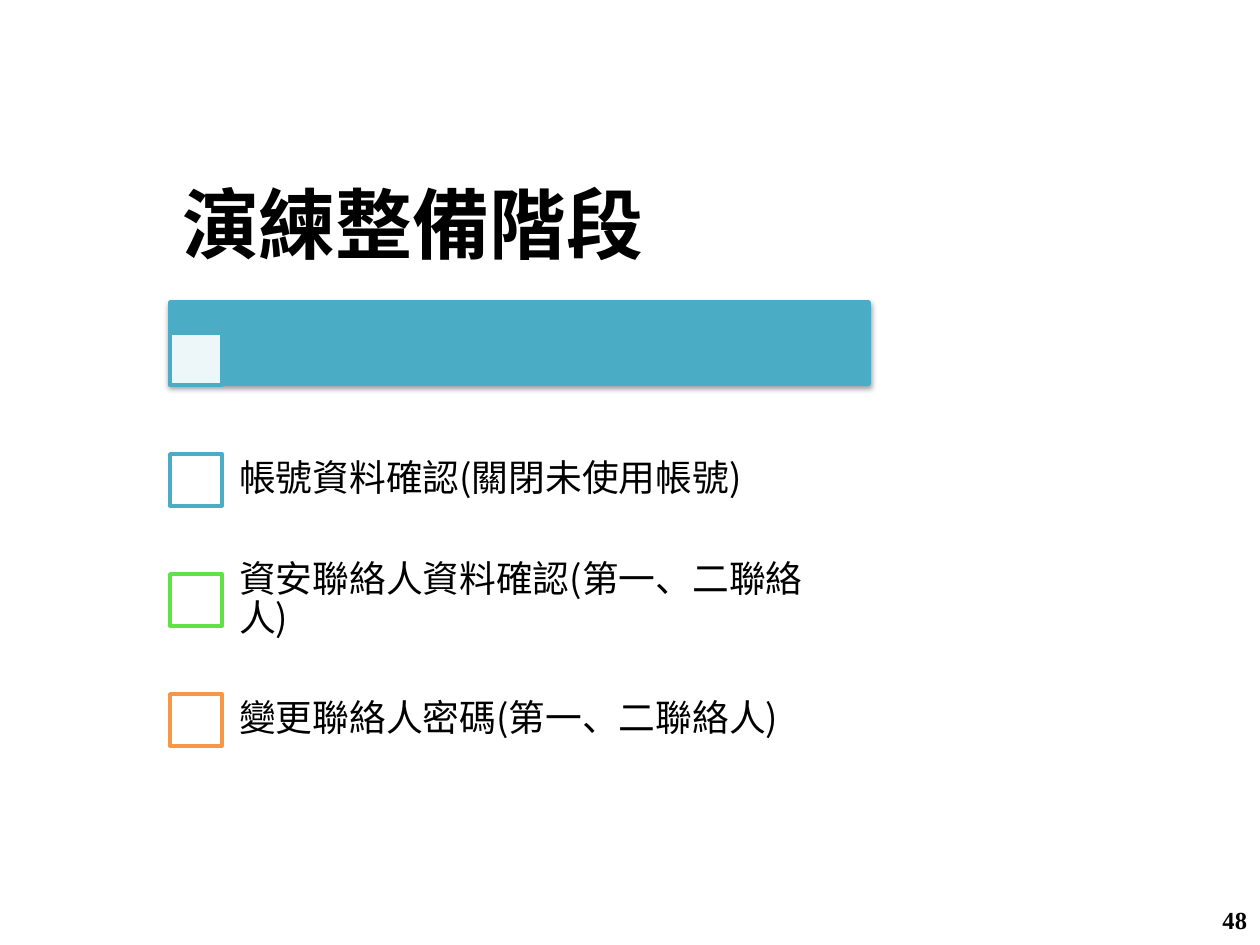
import pptx
import pptx.util
import pptx.dml.color
import pptx.enum.shapes
import pptx.enum.text
import pptx.oxml
import pptx.oxml.ns

# Content
TITLE = "演練整備階段"
TASKS = [
    ("帳號資料確認(關閉未使用帳號)", "teal"),
    ("資安聯絡人資料確認(第一、二聯絡人)", "green"),
    ("變更聯絡人密碼(第一、二聯絡人)", "orange"),
]
PAGE_NUMBER = "48"

COLORS = {"teal": "4BACC6", "green": "60E146", "orange": "F79646",
          "white": "FFFFFF", "black": "000000"}
SANS, SERIF = "Noto Sans CJK SC", "Times New Roman"

# Layout in px
PX = 914400 // 126
SLIDE_W, SLIDE_H = 1260, 945
LEFT, WIDTH = 170, 699
TITLE_TOP, TITLE_H = 155, 147
BAR_TOP, BAR_H = 302, 82
BOX = 52
ROWS_TOP, ROW_H = 420, 120
TASK_LEFT = 219

TITLE_FORMAT = {"size": pptx.util.Pt(44), "name": SERIF, "bold": True}
TASK_FORMAT = {"size": pptx.util.Pt(21), "name": SANS, "bold": False}
PAGE_FORMAT = {"size": pptx.util.Pt(14), "name": SERIF, "bold": True}


def rgb(name):
    return pptx.dml.color.RGBColor.from_string(COLORS[name])


def add_rect(slide, box, fill, line):
    rect = slide.shapes.add_shape(pptx.enum.shapes.MSO_SHAPE.RECTANGLE,
                                  *(v * PX for v in box))
    rect.shadow.inherit = False
    rect.fill.solid()
    rect.fill.fore_color.rgb = rgb(fill)
    rect.line.color.rgb = rgb(line)
    rect.line.width = pptx.util.Pt(2)
    return rect


def add_text(slide, box, text, font_format, insets, paragraph_format):
    frame = slide.shapes.add_textbox(*(v * PX for v in box)).text_frame
    frame.word_wrap = True
    frame.vertical_anchor = pptx.enum.text.MSO_ANCHOR.MIDDLE
    for side, inset in zip(("left", "top", "right", "bottom"), insets):
        setattr(frame, f"margin_{side}", inset * PX)
    paragraph = frame.paragraphs[0]
    for key, value in paragraph_format.items():
        setattr(paragraph, key, value)
    run = paragraph.add_run()
    run.text = text
    for key, value in font_format.items():
        setattr(run.font, key, value)
    run.font.color.rgb = rgb("black")
    # East Asian typeface follows the Latin one
    latin = run.font._element.find(pptx.oxml.ns.qn("a:latin"))
    latin.addnext(pptx.oxml.parse_xml(
        f'<a:ea {pptx.oxml.ns.nsdecls("a")} typeface="{SANS}"/>'))


def add_bar_shadow(bar):
    effects = bar._element.spPr.find(pptx.oxml.ns.qn("a:effectLst"))
    effects.append(pptx.oxml.parse_xml(
        f'<a:outerShdw {pptx.oxml.ns.nsdecls("a")} blurRad="40000" dist="20000"'
        ' dir="5400000" rotWithShape="0"><a:srgbClr val="000000">'
        '<a:alpha val="38000"/></a:srgbClr></a:outerShdw>'))


def set_opacity(shape, percent):
    color = shape._element.spPr.find(".//" + pptx.oxml.ns.qn("a:srgbClr"))
    color.append(pptx.oxml.parse_xml(
        f'<a:alpha {pptx.oxml.ns.nsdecls("a")} val="{percent * 1000}"/>'))


def main():
    deck = pptx.Presentation()
    deck.slide_width, deck.slide_height = SLIDE_W * PX, SLIDE_H * PX
    slide = deck.slides.add_slide(deck.slide_layouts[6])

    # Heading bar with its marker
    bar = add_rect(slide, (LEFT, BAR_TOP, WIDTH, BAR_H), "teal", "teal")
    add_bar_shadow(bar)
    marker = add_rect(slide, (LEFT, BAR_TOP + BAR_H - BOX + 1, BOX, BOX),
                      "white", "teal")
    set_opacity(marker, 90)
    tight = {"line_spacing": 0.9}
    add_text(slide, (LEFT, TITLE_TOP, WIDTH, TITLE_H), TITLE, TITLE_FORMAT,
             (12, 8, 12, 8), tight)

    # Checklist rows
    for row, (task, color) in enumerate(TASKS):
        top = ROWS_TOP + row * ROW_H
        add_rect(slide, (LEFT, top + (ROW_H - BOX) // 2, BOX, BOX), "white", color)
        add_text(slide, (TASK_LEFT, top, LEFT + WIDTH - TASK_LEFT, ROW_H), task,
                 TASK_FORMAT, (20, 20, 20, 20), tight)

    # Page number
    add_text(slide, (966, 895, 294, 50), PAGE_NUMBER, PAGE_FORMAT, (13, 6, 13, 6),
             {"alignment": pptx.enum.text.PP_ALIGN.RIGHT})

    deck.save("out.pptx")


if __name__ == "__main__":
    main()
